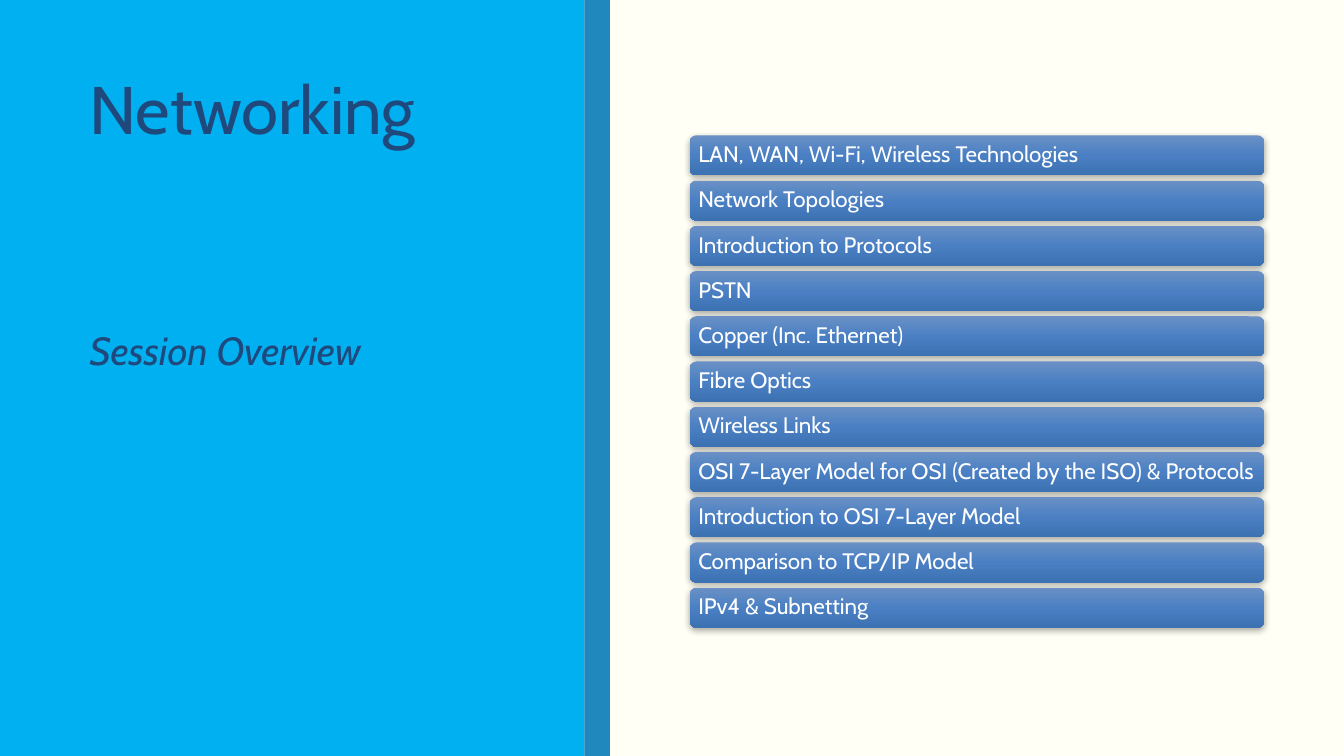
"""Build the Networking session overview slide."""
from dataclasses import dataclass

from pptx import Presentation
from pptx.dml.color import RGBColor
from pptx.enum.shapes import MSO_SHAPE
from pptx.enum.text import MSO_ANCHOR, PP_ALIGN
from pptx.oxml import parse_xml
from pptx.oxml.ns import nsdecls, qn
from pptx.util import Cm, Pt


@dataclass(frozen=True)
class Theme:
    font: str = "Cabin"
    background: str = "FFFFF5"
    panel: str = "00B0F0"
    stripe: str = "2088BC"
    heading: str = "1F497D"
    bar_text: str = "FFFFFF"
    bar_stops: tuple = ((0, "6A90C5"), (50, "4A80C3"), (100, "3C72B2"))
    title_size: int = 48
    subtitle_size: int = 28
    bar_size: int = 16


THEME = Theme()
TOPICS = (
    "LAN, WAN, Wi-Fi, Wireless Technologies",
    "Network Topologies",
    "Introduction to Protocols",
    "PSTN",
    "Copper (Inc. Ethernet)",
    "Fibre Optics",
    "Wireless Links",
    "OSI 7-Layer Model for OSI (Created by the ISO) & Protocols",
    "Introduction to OSI 7-Layer Model",
    "Comparison to TCP/IP Model",
    "IPv4 & Subnetting",
)
BAR_TOP, BAR_PITCH = 3.41, 1.14


def apply(target, values):
    for name, value in values.items():
        setattr(target, name, value)


def write(tf, text, size, color, frame=None, paragraph=None, italic=False):
    apply(tf, {"word_wrap": True, **(frame or {})})
    p = tf.paragraphs[0]
    apply(p, {"alignment": PP_ALIGN.LEFT, **(paragraph or {})})
    r = p.add_run()
    r.text = text
    apply(r.font, {"name": THEME.font, "size": Pt(size), "italic": italic})
    r.font.color.rgb = RGBColor.from_string(color)


def add_block(slide, kind, left, top, width, height):
    s = slide.shapes.add_shape(kind, Cm(left), Cm(top), Cm(width), Cm(height))
    s.shadow.inherit = False
    s.line.fill.background()
    return s


def add_panel(slide, left, width, color):
    s = add_block(slide, MSO_SHAPE.RECTANGLE, left, 0, width, 19.05)
    s.fill.solid()
    s.fill.fore_color.rgb = RGBColor.from_string(color)


def add_heading(slide, top, height, text, size, paragraph, italic=False):
    box = slide.shapes.add_textbox(Cm(2.01), Cm(top), Cm(10.72), Cm(height))
    write(box.text_frame, text, size, THEME.heading,
          paragraph=paragraph, italic=italic)


def style_bar(s):
    sp = s._element.spPr
    stops = "".join(
        f'<a:gs pos="{pos * 1000}"><a:srgbClr val="{color}"/></a:gs>'
        for pos, color in THEME.bar_stops)
    sp.find(qn("a:prstGeom")).addnext(parse_xml(
        f'<a:gradFill {nsdecls("a")} rotWithShape="1"><a:gsLst>{stops}</a:gsLst>'
        '<a:lin ang="5400000" scaled="0"/></a:gradFill>'))
    sp.find(qn("a:effectLst")).append(parse_xml(
        f'<a:outerShdw {nsdecls("a")} blurRad="{Pt(4.5)}" dist="{Pt(1.5)}" '
        'dir="5400000" rotWithShape="0"><a:srgbClr val="000000">'
        '<a:alpha val="35000"/></a:srgbClr></a:outerShdw>'))


def add_bar(slide, top, text):
    s = add_block(slide, MSO_SHAPE.ROUNDED_RECTANGLE, 17.38, top, 14.48, 1.01)
    style_bar(s)
    frame = {"vertical_anchor": MSO_ANCHOR.MIDDLE,
             "margin_left": Cm(0.17), "margin_right": Cm(0.05),
             "margin_top": Cm(0.1), "margin_bottom": Cm(0.1)}
    write(s.text_frame, text, THEME.bar_size, THEME.bar_text,
          frame, {"line_spacing": 0.9})


def main():
    prs = Presentation()
    apply(prs, {"slide_width": Cm(33.87), "slide_height": Cm(19.05)})
    slide = prs.slides.add_slide(prs.slide_layouts[6])
    slide.background.fill.solid()
    slide.background.fill.fore_color.rgb = RGBColor.from_string(THEME.background)

    add_panel(slide, 0, 14.73, THEME.panel)
    add_panel(slide, 14.73, 0.64, THEME.stripe)
    add_heading(slide, 1.91, 5.92, "Networking", THEME.title_size,
                {"line_spacing": 0.84})
    add_heading(slide, 7.94, 9.22, "Session Overview", THEME.subtitle_size,
                {"line_spacing": 1.13, "space_after": Pt(15)}, italic=True)
    for i, topic in enumerate(TOPICS):
        add_bar(slide, BAR_TOP + i * BAR_PITCH, topic)
    prs.save("out.pptx")


if __name__ == "__main__":
    main()
